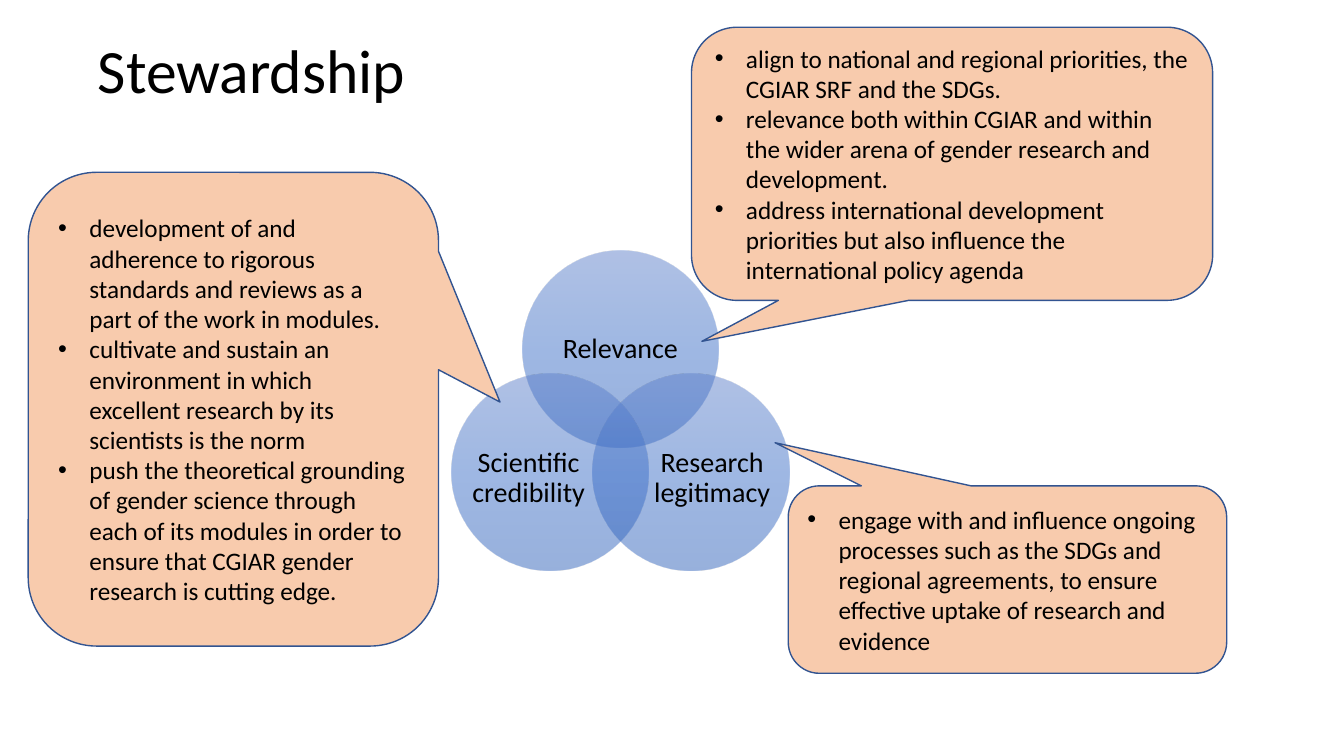
from math import cos, radians, sin

from lxml.etree import SubElement
from pptx import Presentation
from pptx.dml.color import RGBColor
from pptx.enum.shapes import MSO_SHAPE as Shape
from pptx.enum.text import MSO_ANCHOR as Anchor, MSO_AUTO_SIZE as AutoSize, PP_ALIGN as Align
from pptx.oxml.ns import qn
from pptx.util import Inches, Pt

COLUMNS, ROWS = 80, 45  # square cells
VENN_X, VENN_Y = 36.93, 25.65
RING_RADIUS, CIRCLE_SIZE = 4.86, 11.7


def color(hex_text):
    return RGBColor.from_string(hex_text)


class SlideBuilder:
    font_name = "Calibri"
    text_color = "000000"
    callout_fill = "F8CBAD"
    callout_line = "325491"
    circle_stops = ((0, "6183CB"), (50, "3E70CA"), (100, "3062BB"))
    circle_opacity = 50

    def __init__(self, presentation):
        self.cell_width = presentation.slide_width / COLUMNS
        self.cell_height = presentation.slide_height / ROWS
        self.slide = presentation.slides.add_slide(presentation.slide_layouts[5])

    def place(self, column, row, width, height):
        return (round(column * self.cell_width), round(row * self.cell_height),
                round(width * self.cell_width), round(height * self.cell_height))

    def style(self, paragraph, size, alignment):
        paragraph.alignment = alignment
        paragraph.font.name = self.font_name
        paragraph.font.size = Pt(size)
        paragraph.font.color.rgb = color(self.text_color)

    def title(self, text, *cells):
        title = self.slide.shapes.title
        title.left, title.top, title.width, title.height = self.place(*cells)
        frame = title.text_frame
        frame.text = text
        frame.auto_size = AutoSize.NONE
        frame.vertical_anchor = Anchor.MIDDLE
        frame.paragraphs[0].line_spacing = 0.9
        self.style(frame.paragraphs[0], 44, Align.LEFT)

    def circle(self, center_x, center_y, size):
        cells = self.place(center_x - size / 2, center_y - size / 2, size, size)
        circle = self.slide.shapes.add_shape(Shape.OVAL, *cells)
        circle.shadow.inherit = False
        circle.line.fill.background()
        circle.fill.gradient()
        circle.fill.gradient_angle = 270
        # Translucent gradient stops
        stops = circle.element.spPr.find(".//" + qn("a:gsLst"))
        for stop in list(stops):
            stops.remove(stop)
        for position, hex_text in self.circle_stops:
            stop = SubElement(stops, qn("a:gs"), pos=str(position * 1000))
            stop_color = SubElement(stop, qn("a:srgbClr"), val=hex_text)
            SubElement(stop_color, qn("a:alpha"), val=str(self.circle_opacity * 1000))

    def label(self, text, center_x, center_y, width, height):
        cells = self.place(center_x - width / 2, center_y - height / 2, width, height)
        frame = self.slide.shapes.add_textbox(*cells).text_frame
        frame.margin_left = frame.margin_right = frame.margin_top = frame.margin_bottom = 0
        frame.word_wrap = True
        frame.vertical_anchor = Anchor.MIDDLE
        frame.text = text
        frame.paragraphs[0].line_spacing = 0.9
        self.style(frame.paragraphs[0], 20, Align.CENTER)

    def callout(self, cells, tip, points):
        callout = self.slide.shapes.add_shape(
            Shape.ROUNDED_RECTANGULAR_CALLOUT, *self.place(*cells))
        callout.shadow.inherit = False
        callout.adjustments[0], callout.adjustments[1] = tip
        callout.fill.solid()
        callout.fill.fore_color.rgb = color(self.callout_fill)
        callout.line.color.rgb = color(self.callout_line)
        callout.line.width = Pt(1)
        frame = callout.text_frame
        frame.word_wrap = True
        frame.vertical_anchor = Anchor.MIDDLE
        for index, point in enumerate(points):
            paragraph = frame.add_paragraph() if index else frame.paragraphs[0]
            paragraph.text = point
            self.bullet(paragraph)
            self.style(paragraph, 18, Align.LEFT)

    def bullet(self, paragraph):
        properties = paragraph._p.get_or_add_pPr()
        indent = Inches(0.31)
        properties.set("marL", str(indent))
        properties.set("indent", str(-indent))
        SubElement(properties, qn("a:buFont"), typeface="Arial")
        SubElement(properties, qn("a:buChar"), char="•")


def main():
    presentation = Presentation()
    presentation.slide_width = Inches(13.33)
    presentation.slide_height = Inches(7.5)
    builder = SlideBuilder(presentation)

    builder.title("Stewardship", 5.22, 0, 69, 8.7)

    # Venn diagram: angle on the ring, label, label offset from the centre, label size
    circles = (
        (-90, "Relevance", (0, -4.85), (8.58, 5.28)),
        (30, "Research legitimacy", (5.46, 2.82), (7.02, 6.42)),
        (150, "Scientific credibility", (-5.46, 2.82), (7.02, 6.42)),
    )
    for angle, text, (offset_x, offset_y), size in circles:
        builder.circle(VENN_X + RING_RADIUS * cos(radians(angle)),
                       VENN_Y + RING_RADIUS * sin(radians(angle)), CIRCLE_SIZE)
        builder.label(text, VENN_X + offset_x, VENN_Y + offset_y, *size)

    # Callouts: cells, tip position, bullet points
    callouts = (
        ((41.16, 1.62, 31.02, 16.26), (-0.48, 0.65), (
            "align to national and regional priorities, the CGIAR SRF and the SDGs.",
            "relevance both within CGIAR and within the wider arena of gender research "
            "and development.",
            "address international development priorities but also influence the "
            "international policy agenda",
        )),
        ((1.68, 10.26, 24.42, 28.2), (0.65, -0.015), (
            "development of and adherence to rigorous standards and reviews as a part of "
            "the work in modules.",
            "cultivate and sustain an environment in which excellent research by its "
            "scientists is the norm",
            "push the theoretical grounding of gender science through each of its modules "
            "in order to ensure that CGIAR gender research is cutting edge.",
        )),
        ((46.92, 28.92, 26.1, 11.16), (-0.53, -0.73), (
            "engage with and influence ongoing processes such as the SDGs and regional "
            "agreements, to ensure effective uptake of research and evidence",
        )),
    )
    for cells, tip, points in callouts:
        builder.callout(cells, tip, points)

    presentation.save("out.pptx")


if __name__ == "__main__":
    main()
